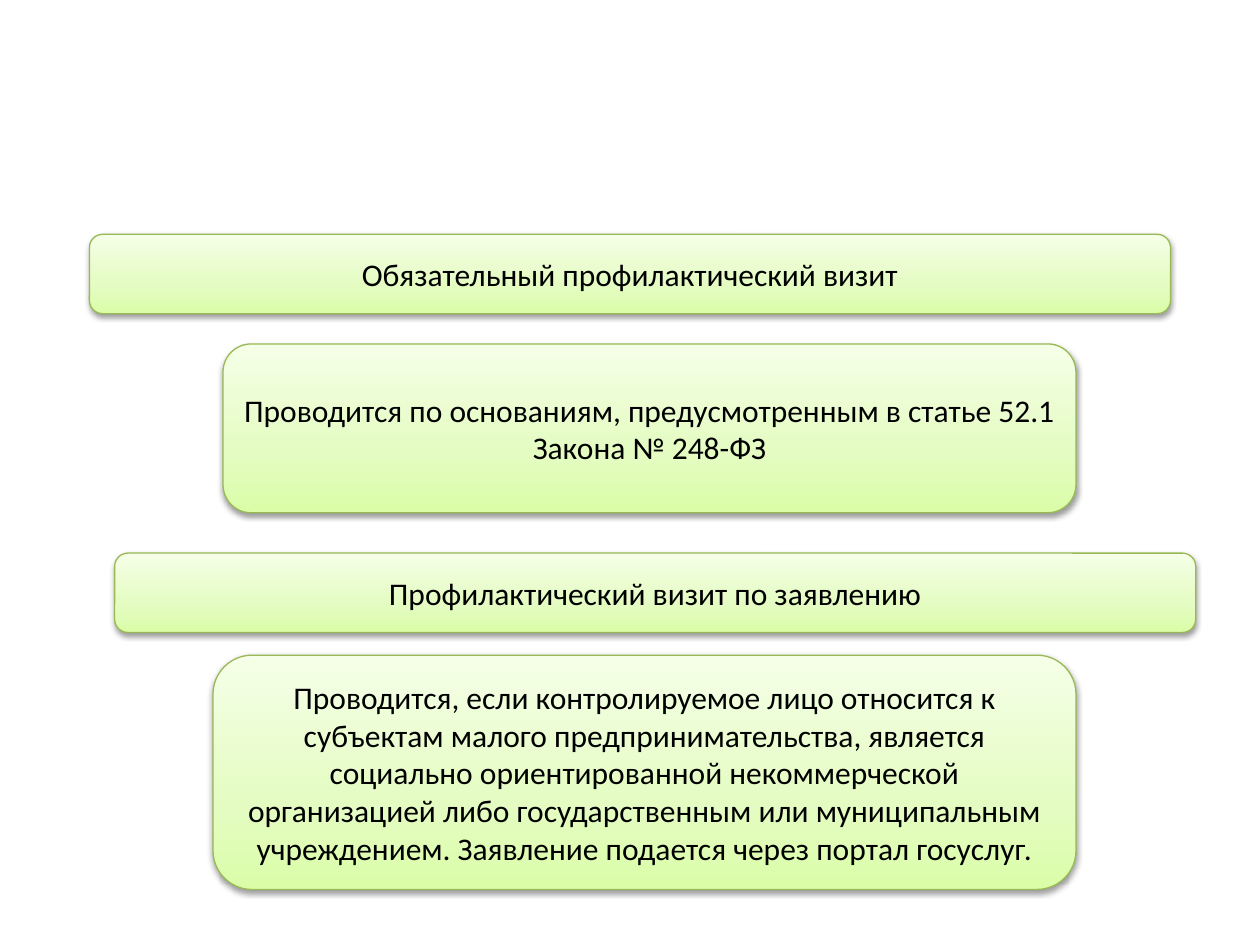
from lxml.etree import SubElement
from pptx import Presentation
from pptx.dml.color import RGBColor
from pptx.enum.shapes import MSO_SHAPE
from pptx.enum.text import MSO_ANCHOR, PP_ALIGN
from pptx.oxml.ns import qn
from pptx.util import Inches, Pt

COLORS = {
    "gradient_bottom": "DAFDA7",
    "gradient_middle": "E4FCC2",
    "gradient_top": "F5FFE7",
    "line": "98B955",
    "text": "000000",
    "shadow": "000000",
}
GRADIENT_STOPS = [(0, "gradient_bottom"), (35, "gradient_middle"), (100, "gradient_top")]

# Left, top, width, height in inches, then the text
BOXES = [
    (0.71, 1.86, 8.58, 0.63, "Обязательный профилактический визит"),
    (1.77, 2.73, 6.77, 1.34,
     "Проводится по основаниям, предусмотренным в статье 52.1 Закона № 248-ФЗ"),
    (0.91, 4.39, 8.58, 0.63, "Профилактический визит по заявлению"),
    (1.69, 5.2, 6.85, 1.86,
     "Проводится, если контролируемое лицо относится к субъектам малого "
     "предпринимательства, является социально ориентированной некоммерческой "
     "организацией либо государственным или муниципальным учреждением. "
     "Заявление подается через портал госуслуг."),
]


def set_gradient(shape):
    """Fill the shape with the three green stops, running upwards."""
    shape.fill.gradient()
    shape.fill.gradient_angle = 90
    stop_list = shape.fill._xPr.find(".//" + qn("a:gsLst"))
    for old_stop in list(stop_list):
        stop_list.remove(old_stop)
    for position, color in GRADIENT_STOPS:
        stop = SubElement(stop_list, qn("a:gs"), pos=str(position * 1000))
        SubElement(stop, qn("a:srgbClr"), val=COLORS[color])


def set_shadow(shape):
    """Give the shape a soft shadow straight below it."""
    shape.shadow.inherit = False
    effects = shape._element.spPr.find(qn("a:effectLst"))
    shadow = SubElement(effects, qn("a:outerShdw"), blurRad="40000",
                        dist="20000", dir="5400000", rotWithShape="0")
    color = SubElement(shadow, qn("a:srgbClr"), val=COLORS["shadow"])
    SubElement(color, qn("a:alpha"), val="38000")


def add_box(slide, left, top, width, height, text):
    """Add a rounded green box with centred text."""
    shape = slide.shapes.add_shape(MSO_SHAPE.ROUNDED_RECTANGLE, Inches(left),
                                   Inches(top), Inches(width), Inches(height))
    set_gradient(shape)
    shape.line.color.rgb = RGBColor.from_string(COLORS["line"])
    shape.line.width = Pt(0.75)
    set_shadow(shape)

    # Text
    frame = shape.text_frame
    frame.word_wrap = True
    frame.vertical_anchor = MSO_ANCHOR.MIDDLE
    paragraph = frame.paragraphs[0]
    paragraph.text = text
    paragraph.alignment = PP_ALIGN.CENTER
    paragraph.font.name = "Calibri"
    paragraph.font.size = Pt(18)
    paragraph.font.color.rgb = RGBColor.from_string(COLORS["text"])


def main():
    presentation = Presentation()
    presentation.slide_width = Inches(10)
    presentation.slide_height = Inches(7.5)
    slide = presentation.slides.add_slide(presentation.slide_layouts[6])

    # Headings, each with its explanation below
    for box in BOXES:
        add_box(slide, *box)

    presentation.save("out.pptx")


if __name__ == "__main__":
    main()
